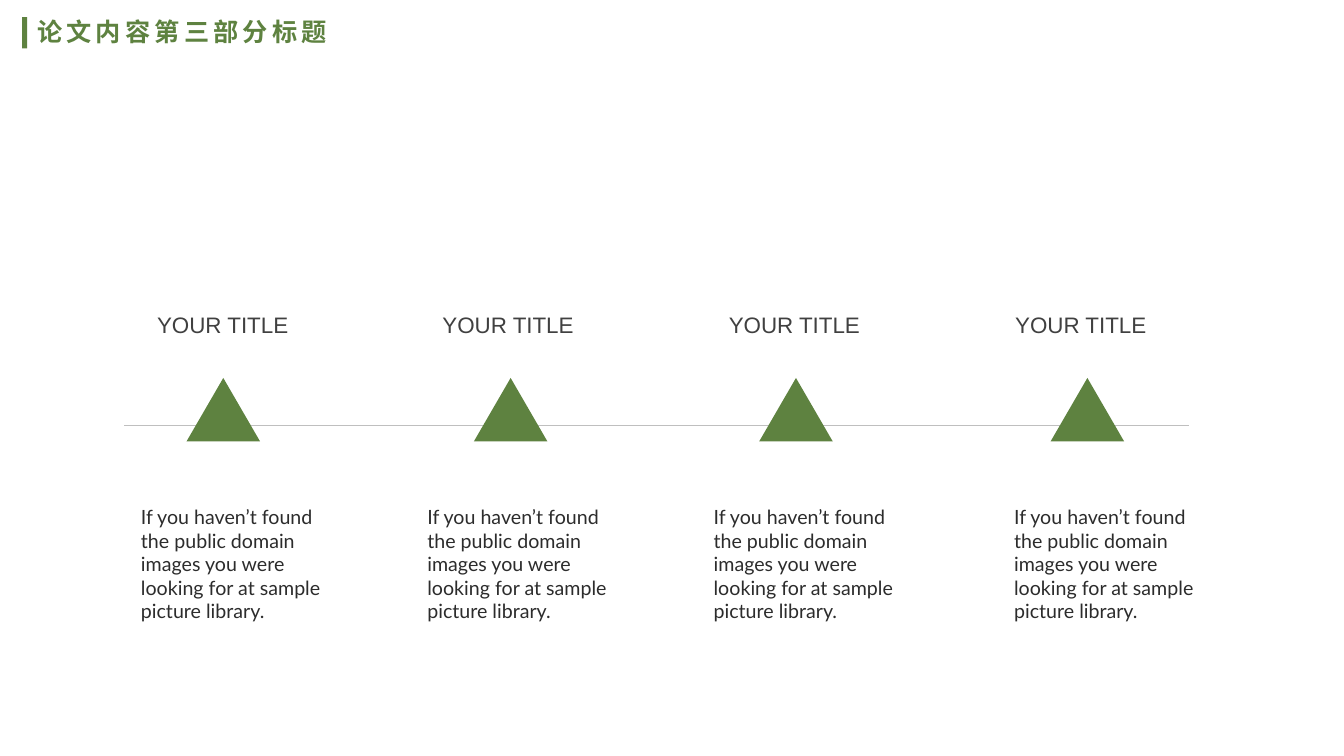
from dataclasses import dataclass

from lxml import etree
from pptx import Presentation
from pptx.dml.color import RGBColor
from pptx.enum.shapes import MSO_CONNECTOR, MSO_SHAPE
from pptx.enum.text import MSO_AUTO_SIZE
from pptx.oxml.ns import qn
from pptx.slide import Slide
from pptx.util import Inches, Pt

STRAIGHT = MSO_CONNECTOR.STRAIGHT
TRIANGLE = MSO_SHAPE.ISOSCELES_TRIANGLE
BAR = MSO_SHAPE.RECTANGLE
GROW = MSO_AUTO_SIZE.SHAPE_TO_FIT_TEXT

GREEN = "5E8240"
GREY = "BFBFBF"
HEADING = "论文内容第三部分标题"
LABEL = "YOUR TITLE"
BODY = ("If you haven’t found the public domain images you were "
        "looking for at sample picture library.")


@dataclass(frozen=True)
class Style:
    font: str
    size: int
    hue: str
    bold: bool = False
    space: int = 0
    wrap: bool = True


@dataclass(frozen=True)
class Box:
    left: float
    top: float
    width: float
    height: float

    def emu(self) -> list[int]:
        return [Inches(n) for n in (self.left, self.top, self.width, self.height)]


@dataclass(frozen=True)
class Step:
    mark: float
    label: float
    body: float


HEAD_STYLE = Style("Calibri", 18, GREEN, bold=True, space=3)
LABEL_STYLE = Style("Arial", 16, "404040", wrap=False)
BODY_STYLE = Style("Lato", 14, "2C2C2C")

STEPS = [
    Step(1.85, 1.46, 1.3),
    Step(4.7, 4.29, 4.14),
    Step(7.53, 7.13, 6.98),
    Step(10.42, 9.97, 9.96),
]


def color(code: str) -> RGBColor:
    return RGBColor.from_string(code)


def add_line(slide: Slide, start: float, end: float, top: float) -> None:
    line = slide.shapes.add_connector(
        STRAIGHT, Inches(start), Inches(top), Inches(end), Inches(top))
    line.line.color.rgb = color(GREY)
    line.line.width = Pt(0.75)
    etree.SubElement(line._element.spPr, qn("a:effectLst"))


def add_mark(slide: Slide, kind: MSO_SHAPE, box: Box) -> None:
    mark = slide.shapes.add_shape(kind, *box.emu())
    mark.shadow.inherit = False
    mark.fill.solid()
    mark.fill.fore_color.rgb = color(GREEN)
    mark.line.fill.background()


def add_text(slide: Slide, text: str, box: Box, style: Style) -> None:
    frame = slide.shapes.add_textbox(*box.emu()).text_frame
    frame.word_wrap = style.wrap
    frame.auto_size = GROW
    run = frame.paragraphs[0].add_run()
    run.text = text
    form = {"name": style.font, "size": Pt(style.size), "bold": style.bold}
    for key, value in form.items():
        setattr(run.font, key, value)
    run.font.color.rgb = color(style.hue)
    if style.space:
        run._r.get_or_add_rPr().set("spc", str(style.space * 100))


def main() -> None:
    deck = Presentation()
    deck.slide_width = Inches(13.33)
    deck.slide_height = Inches(7.5)
    slide = deck.slides.add_slide(deck.slide_layouts[6])

    add_line(slide, 1.23, 11.79, 4.22)
    for step in STEPS:
        add_mark(slide, TRIANGLE, Box(step.mark, 3.75, 0.73, 0.63))
    for step in STEPS:
        add_text(slide, LABEL, Box(step.label, 3.04, 1.52, 0.37), LABEL_STYLE)
        add_text(slide, BODY, Box(step.body, 4.96, 2.06, 1.51), BODY_STYLE)
    add_text(slide, HEADING, Box(0.27, 0.11, 3.13, 0.4), HEAD_STYLE)
    add_mark(slide, BAR, Box(0.22, 0.17, 0.05, 0.31))

    deck.save("out.pptx")


if __name__ == "__main__":
    main()
